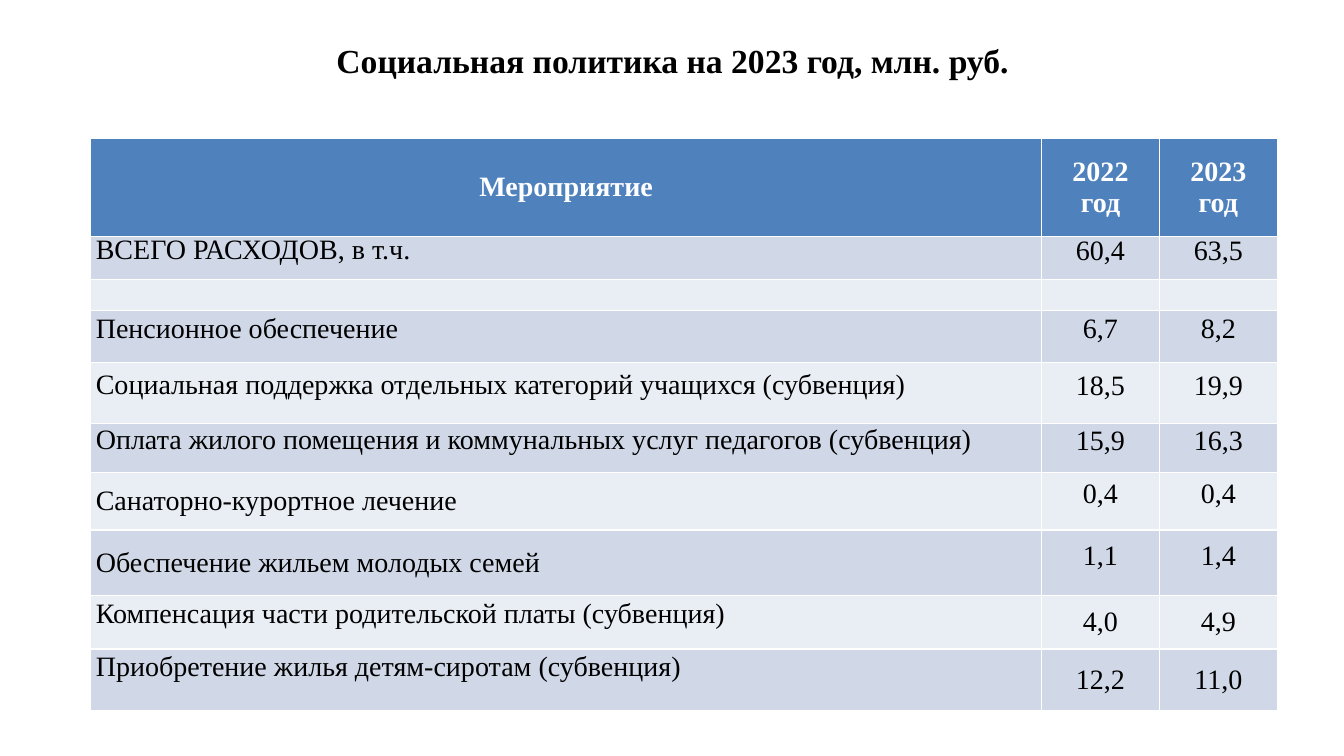
from pptx import Presentation
from pptx.dml.color import RGBColor
from pptx.enum.text import MSO_ANCHOR, PP_ALIGN
from pptx.util import Inches, Pt

MIDDLE, TOP = MSO_ANCHOR.MIDDLE, MSO_ANCHOR.TOP
LEFT, CENTER = PP_ALIGN.LEFT, PP_ALIGN.CENTER
FONT = "Times New Roman"
COLORS = {"text": "000000", "header_text": "FFFFFF", "header": "4F81BD",
          "odd": "D0D8E8", "even": "E9EDF4"}

TITLE = "Социальная политика на 2023 год, млн. руб."
HEADER = ("Мероприятие", "2022 год", "2023 год")
COLUMN_WIDTHS = (9.43, 1.17, 1.17)
HEADER_HEIGHT = 0.98

# Row height, label layout, values
ROWS = (
    (0.42, "tight", ("ВСЕГО РАСХОДОВ, в т.ч.", "60,4", "63,5")),
    (0.31, "empty", ("", "", "")),
    (0.52, "tight", ("Пенсионное обеспечение", "6,7", "8,2")),
    (0.6, "tight", ("Социальная поддержка отдельных категорий учащихся (субвенция)",
                    "18,5", "19,9")),
    (0.49, "tight", ("Оплата жилого помещения и коммунальных услуг педагогов (субвенция)",
                     "15,9", "16,3")),
    (0.57, "loose", ("Санаторно-курортное лечение", "0,4", "0,4")),
    (0.65, "loose", ("Обеспечение жильем молодых семей", "1,1", "1,4")),
    (0.53, "lowered", ("Компенсация части родительской платы (субвенция)", "4,0", "4,9")),
    (0.61, "lowered", ("Приобретение жилья детям-сиротам (субвенция)", "12,2", "11,0")),
)
LABEL_SPACING = {"tight": 11, "lowered": 12}


def color(name):
    """Return the named palette colour."""
    return RGBColor.from_string(COLORS[name])


def write(paragraph, text, size, color_name, bold, align):
    """Write one formatted line of text."""
    paragraph.text = text
    paragraph.alignment = align
    font = paragraph.font
    font.name, font.size, font.bold = FONT, Pt(size), bold
    font.color.rgb = color(color_name)


def fill_cell(cell, text, fill, text_color, bold, align):
    """Fill a table cell and write its text in the middle."""
    cell.fill.solid()
    cell.fill.fore_color.rgb = color(fill)
    cell.vertical_anchor = MIDDLE
    if text:
        write(cell.text_frame.paragraphs[0], text, 20, text_color, bold, align)


def set_margins(cell, side, top):
    """Set the side and top margins of a cell, with none at the bottom."""
    cell.margin_left = cell.margin_right = Inches(side)
    cell.margin_top, cell.margin_bottom = Inches(top), 0


def add_title(slide, left, top, width, height):
    """Add the centred slide title."""
    box = slide.shapes.add_textbox(Inches(left), Inches(top), Inches(width), Inches(height))
    frame = box.text_frame
    frame.word_wrap = True
    frame.vertical_anchor = MIDDLE
    write(frame.paragraphs[0], TITLE, 24, "text", True, CENTER)


def add_body_row(table, index, layout, values):
    """Fill one expense row with its label and yearly values."""
    for column, value in enumerate(values):
        cell = table.cell(index, column)
        is_label = column == 0
        fill_cell(cell, value, "odd" if index % 2 else "even", "text", False,
                  LEFT if is_label else CENTER)
        if is_label or layout != "lowered":
            set_margins(cell, 0.05, 0)
            spacing = LABEL_SPACING.get(layout) if is_label else 12
            if value and spacing:
                cell.text_frame.paragraphs[0].line_spacing = Pt(spacing)
        if is_label and layout == "lowered":
            cell.vertical_anchor = TOP
            cell.margin_top = Pt(12)


def add_expense_table(slide, left, top):
    """Add the table of expenses by measure and year."""
    heights = [HEADER_HEIGHT] + [height for height, _, _ in ROWS]
    table = slide.shapes.add_table(
        len(heights), len(HEADER), Inches(left), Inches(top),
        Inches(sum(COLUMN_WIDTHS)), Inches(sum(heights))).table
    for column, width in zip(table.columns, COLUMN_WIDTHS):
        column.width = Inches(width)
    for row, height in zip(table.rows, heights):
        row.height = Inches(height)
    for column, text in enumerate(HEADER):
        fill_cell(table.cell(0, column), text, "header", "header_text", True, CENTER)
    for index, (_, layout, values) in enumerate(ROWS, start=1):
        add_body_row(table, index, layout, values)


def main():
    """Build and save the presentation."""
    presentation = Presentation()
    presentation.slide_width, presentation.slide_height = Inches(13.33), Inches(7.5)
    slide = presentation.slides.add_slide(presentation.slide_layouts[6])
    add_title(slide, 0.67, 0.3, 12, 0.6)
    add_expense_table(slide, 0.9, 1.37)
    presentation.save("out.pptx")


if __name__ == "__main__":
    main()
